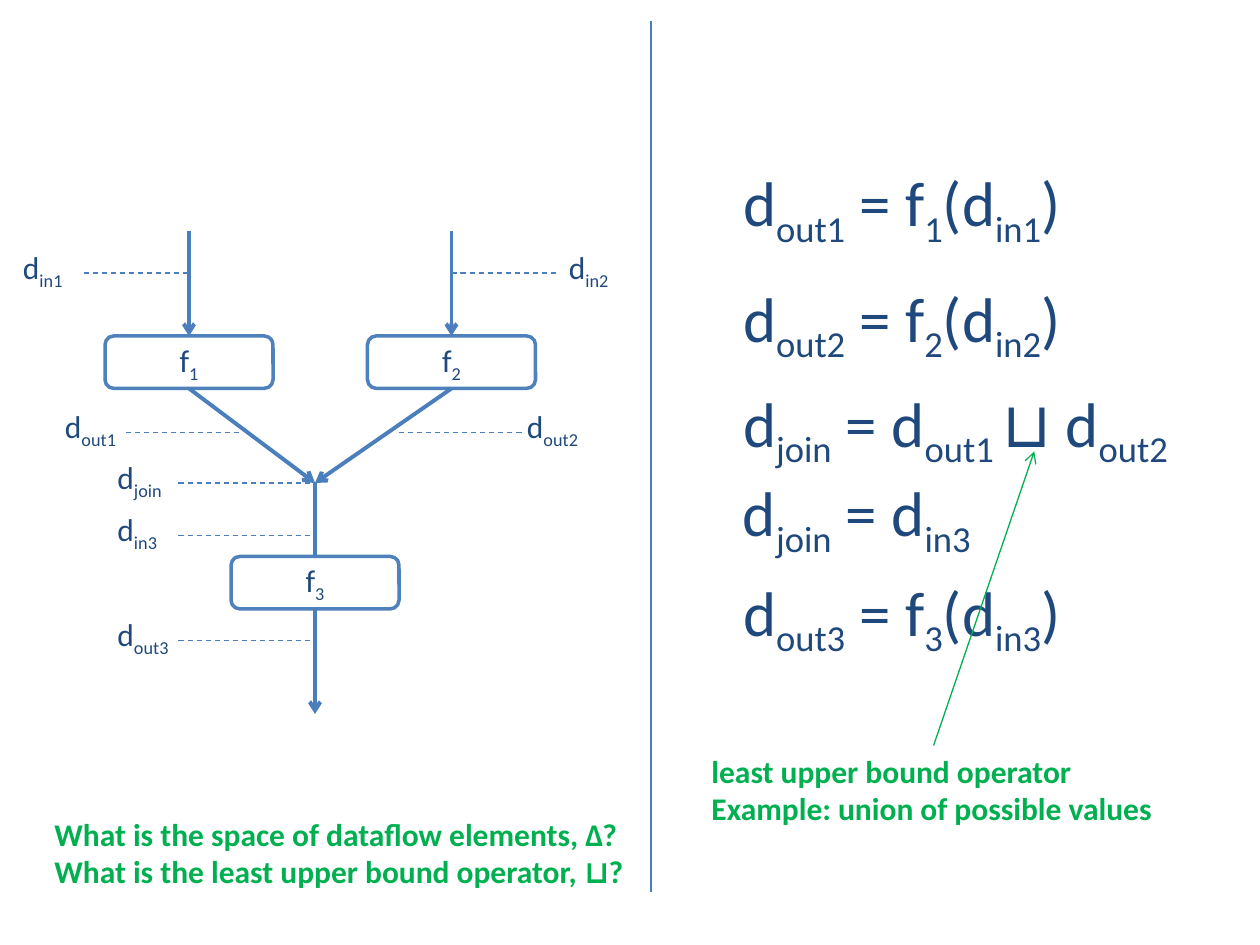
from lxml.etree import SubElement
from pptx import Presentation
from pptx.dml.color import RGBColor
from pptx.enum.dml import MSO_LINE
from pptx.enum.shapes import MSO_CONNECTOR, MSO_SHAPE
from pptx.enum.text import MSO_ANCHOR, MSO_AUTO_SIZE, PP_ALIGN
from pptx.oxml.ns import qn
from pptx.util import Pt

# Content: subscripts stand between underscores; lengths are in points
EQUATIONS = [  # text, top, width
    ("d_out1_ = f_1_(d_in1_)", 90, 215),
    ("d_out2_ = f_2_(d_in2_)", 156, 215),
    ("d_join_ = d_out1 _⊔ d_out2_", 216, 275),
    ("d_join_ = d_in3_", 267, 155),
    ("d_out3_ = f_3_(d_in3_)", 324, 209),
]
BLOCKS = {"f_1_": (108, 192), "f_2_": (258, 192), "f_3_": (180, 318)}  # centre, top
LABELS = [  # text, left, width, height of guide, guide start, guide end
    ("d_in1_", 6, 40, 156, 48, 108),
    ("d_in2_", 318, 40, 156, 258, 318),
    ("d_out1_", 30, 51, 247, 72, 138),
    ("d_out2_", 294, 48, 247, 228, 300),
    ("d_join_", 60, 51, 276, 102, 180),
    ("d_in3_", 60, 51, 306, 102, 180),
    ("d_out3_", 60, 51, 366, 102, 180),
]
NOTES = [  # lines, left, top, width
    (["least upper bound operator", "Example: union of possible values"], 399.5, 426, 268),
    (["What is the space of dataflow elements, Δ?",
      "What is the least upper bound operator, ⊔?"], 24, 462, 341),
]
JOIN = (180, 276)
BLOCK_SIZE = (96, 30)
FLOW_LENGTH = 60
EQUATION_LEFT = 417.5
TOP_SIDE, BOTTOM_SIDE = 0, 2

THEME = {
    "font": "Calibri",
    "text": RGBColor(0x1F, 0x49, 0x7D),
    "line": RGBColor(0x4B, 0x7E, 0xBC),
    "outline": RGBColor(0x4F, 0x81, 0xBD),
    "accent": RGBColor(0x00, 0xB0, 0x50),
    "equation_size": Pt(36),
    "label_size": Pt(18),
    "thin": Pt(0.75),
    "border": Pt(2),
    "thick": Pt(2.25),
}
EQUATION = {"size": THEME["equation_size"], "bold": False}
LABEL = {"size": THEME["label_size"], "bold": False}
NOTE = {"size": THEME["label_size"], "bold": True}


def write(frame, lines, style, color=THEME["text"], align=PP_ALIGN.LEFT):
    for number, line in enumerate(lines):
        para = frame.add_paragraph() if number else frame.paragraphs[0]
        para.alignment = align
        for index, part in enumerate(line.split("_")):
            if not part:
                continue
            span = para.add_run()
            span.text = part
            for name, value in {"name": THEME["font"], **style}.items():
                setattr(span.font, name, value)
            span.font.color.rgb = color
            if index % 2:
                span.font._element.set("baseline", "-25000")


def add_text(page, lines, left, top, width, height, style, color=THEME["text"], wrap=False):
    box = page.shapes.add_textbox(Pt(left), Pt(top), Pt(width), Pt(height))
    box.text_frame.word_wrap = wrap
    box.text_frame.auto_size = MSO_AUTO_SIZE.SHAPE_TO_FIT_TEXT
    write(box.text_frame, lines, style, color)


def add_line(page, start, end, width=THEME["thin"], color=THEME["line"],
             arrow=False, dashed=False):
    line = page.shapes.add_connector(
        MSO_CONNECTOR.STRAIGHT, *(Pt(value) for value in (*start, *end)))
    line.line.width = width
    line.line.color.rgb = color
    if dashed:
        line.line.dash_style = MSO_LINE.DASH
    if arrow:
        SubElement(line.line._get_or_add_ln(), qn("a:tailEnd"), type="arrow")
    SubElement(line._element.spPr, qn("a:effectLst"))
    return line


def add_block(page, text, center, top):
    width, height = BLOCK_SIZE
    block = page.shapes.add_shape(MSO_SHAPE.ROUNDED_RECTANGLE, Pt(center - width / 2),
                                  Pt(top), Pt(width), Pt(height))
    block.shadow.inherit = False
    block.fill.background()
    block.line.color.rgb = THEME["outline"]
    block.line.width = THEME["border"]
    block.text_frame.vertical_anchor = MSO_ANCHOR.MIDDLE
    write(block.text_frame, [text], LABEL, align=PP_ALIGN.CENTER)
    return block


def add_flow(page, blocks):
    thick = THEME["thick"]
    for name, (center, top) in BLOCKS.items():
        bottom = top + BLOCK_SIZE[1]
        last = name == "f_3_"
        # The first two blocks flow into the join, the last one flows out of it
        entry = JOIN if last else (center, top - FLOW_LENGTH)
        leave = (center, bottom + FLOW_LENGTH) if last else JOIN
        incoming = add_line(page, entry, (center, top), thick, arrow=not last)
        incoming.end_connect(blocks[name], TOP_SIDE)
        outgoing = add_line(page, (center, bottom), leave, thick, arrow=True)
        outgoing.begin_connect(blocks[name], BOTTOM_SIDE)


def main():
    deck = Presentation()
    deck.slide_width, deck.slide_height = Pt(720), Pt(540)
    page = deck.slides.add_slide(deck.slide_layouts[6])

    # Divider and equations
    add_line(page, (372, 12), (372, 510))
    for text, top, width in EQUATIONS:
        add_text(page, [text], EQUATION_LEFT, top, width, 51, EQUATION)

    # Flow graph
    blocks = {name: add_block(page, name, *place) for name, place in BLOCKS.items()}
    add_flow(page, blocks)

    # Labels with dashed guides
    for text, left, width, level, start, end in LABELS:
        add_line(page, (start, level), (end, level), dashed=True)
        add_text(page, [text], left, level - 18, width, 29, LABEL, wrap=True)

    # Notes and the pointer to the operator
    add_line(page, (533.5, 426), (591, 258), color=THEME["accent"], arrow=True)
    for lines, left, top, width in NOTES:
        add_text(page, lines, left, top, width, 51, NOTE, THEME["accent"])

    deck.save("out.pptx")


if __name__ == "__main__":
    main()
